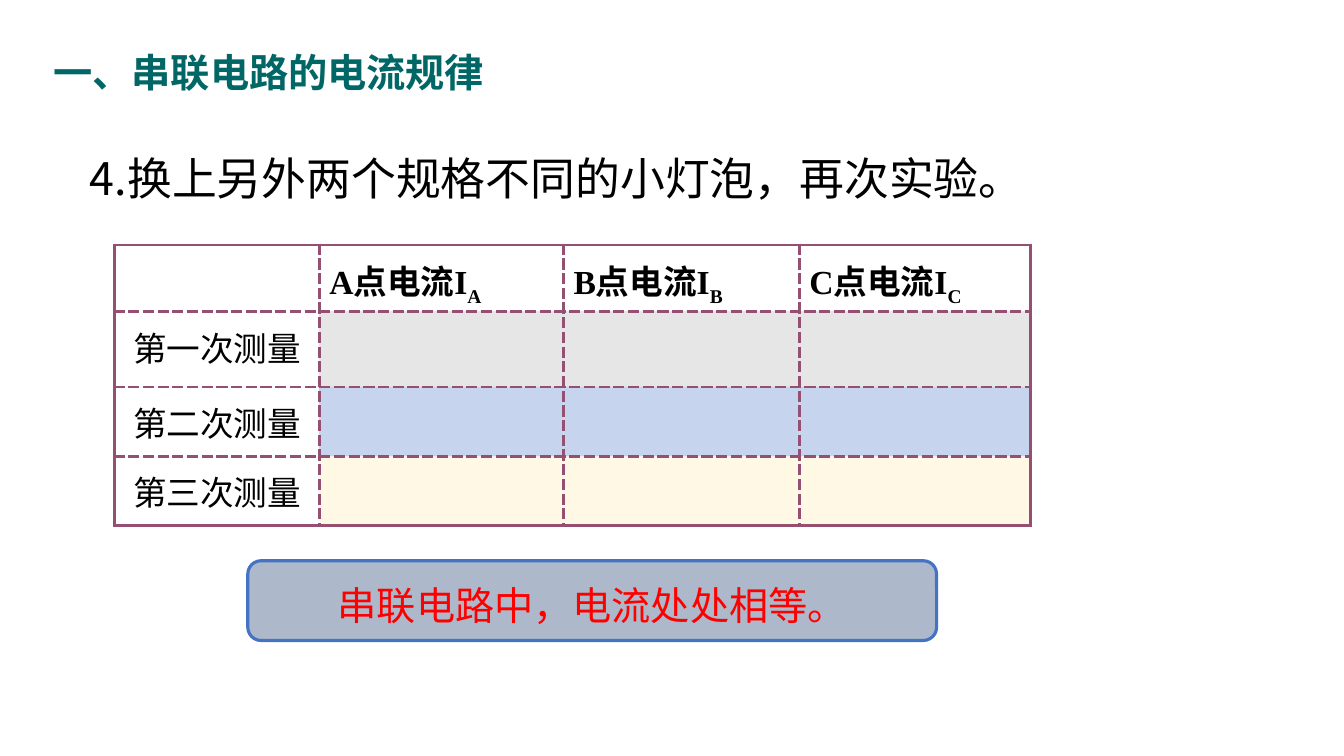
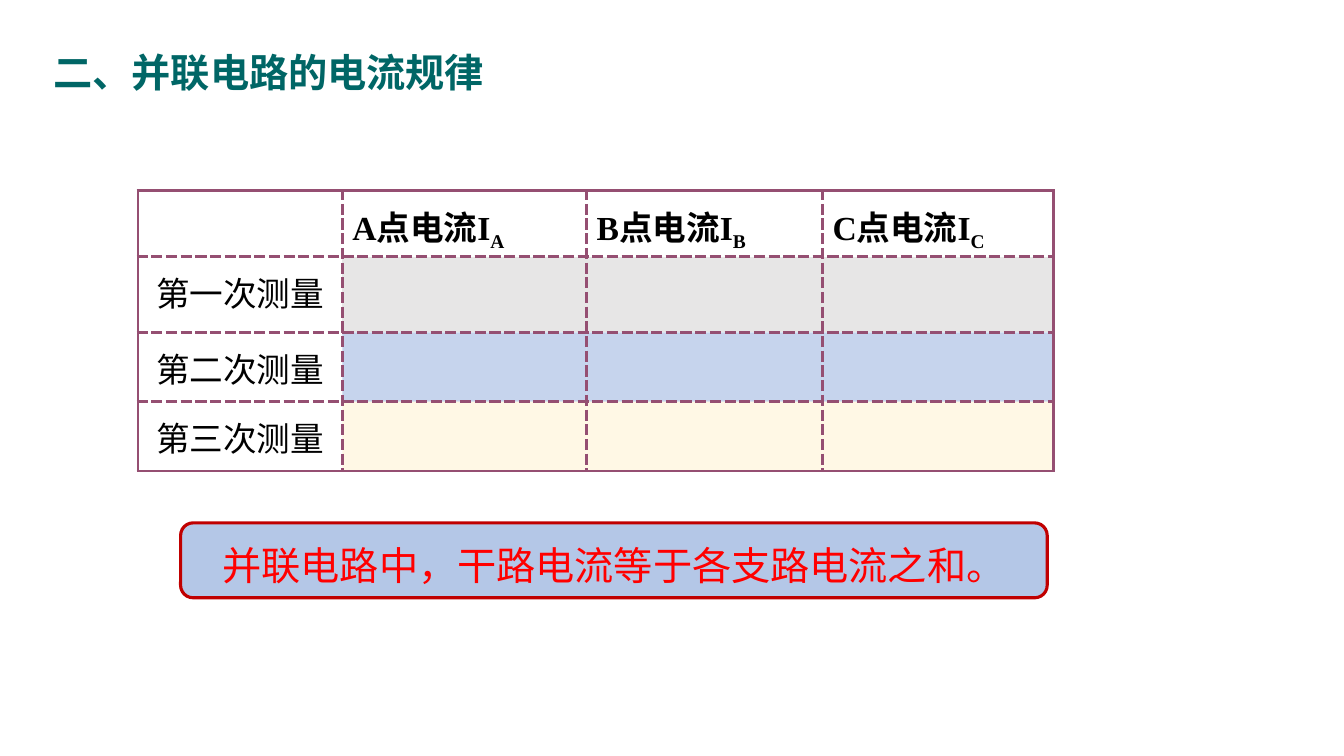
from lxml import etree
from pptx import Presentation
from pptx.dml.color import RGBColor
from pptx.enum.shapes import MSO_SHAPE
from pptx.enum.text import MSO_ANCHOR, MSO_AUTO_SIZE, PP_ALIGN
from pptx.oxml.ns import qn
from pptx.util import Pt

ROUNDED = MSO_SHAPE.ROUNDED_RECTANGLE
TOP, MIDDLE = MSO_ANCHOR.TOP, MSO_ANCHOR.MIDDLE
NO_FIT = MSO_AUTO_SIZE.NONE
LEFT, CENTER = PP_ALIGN.LEFT, PP_ALIGN.CENTER

# Colours
TEAL = RGBColor(0x00, 0x66, 0x66)
BLACK = RGBColor(0x00, 0x00, 0x00)
RED = RGBColor(0xFF, 0x00, 0x00)
DARK_RED = RGBColor(0xC0, 0x00, 0x00)
PLUM = RGBColor(0x95, 0x4F, 0x72)
GREY = RGBColor(0xE7, 0xE6, 0xE6)
BLUE = RGBColor(0x8F, 0xAA, 0xDC)
CREAM = RGBColor(0xFF, 0xF2, 0xCC)
SLATE = RGBColor(0xAD, 0xB9, 0xCA)
STRONG_BLUE = RGBColor(0x44, 0x72, 0xC4)
PALE_BLUE = RGBColor(0xB4, 0xC7, 0xE7)

# Text formats
SANS = "Noto Sans CJK SC"
SERIF = "Times New Roman"
TITLE = {"name": SANS, "size": Pt(28), "bold": True}
STEP = {"name": SANS, "size": Pt(32), "bold": False}
HEADER = {"name": SERIF, "size": Pt(24), "bold": True}
ROW_LABEL = {"name": SANS, "size": Pt(24), "bold": False}
RULE = {"name": SANS, "size": Pt(28), "bold": False}

# Table measures, in points, and content
COLUMN_WIDTHS = (146, 174.5, 168.5, 165)
ROW_HEIGHTS = (36.5, 54, 49.5, 49.5)
POINTS = "ABC"
MEASUREMENTS = (("第一次测量", GREY, 100), ("第二次测量", BLUE, 50), ("第三次测量", CREAM, 50))


def add_span(para, text, style, color, baseline=None):
    """Add a run, with the same face for Chinese text."""
    span = para.add_run()
    span.text = text
    for name, value in style.items():
        setattr(span.font, name, value)
    span.font.color.rgb = color
    properties = span._r.get_or_add_rPr()
    etree.SubElement(properties, qn("a:ea"), typeface=SANS)
    if baseline:
        properties.set("baseline", str(baseline * 1000))


def place(shape, left, top, width, height):
    shape.left, shape.top = Pt(left), Pt(top)
    shape.width, shape.height = Pt(width), Pt(height)


def write_line(shape, text, style, color, align, anchor, spacing=1.0):
    """Fill a box with one line of text."""
    frame = shape.text_frame
    frame.word_wrap = True
    frame.auto_size = NO_FIT
    frame.vertical_anchor = anchor
    para = frame.paragraphs[0]
    para.alignment = align
    para.line_spacing = spacing
    para.space_before = Pt(0)
    add_span(para, text, style, color)
    return para


def add_page(deck, layout, title):
    page = deck.slides.add_slide(deck.slide_layouts[layout])
    place(page.shapes.title, 31, 31, 480, 41)
    write_line(page.shapes.title, title, TITLE, TEAL, LEFT, TOP)
    return page


def fill_step(page, text):
    """Put the experiment step in the body placeholder."""
    body = page.placeholders[1]
    place(body, 57, 85, 724, 55)
    para = write_line(body, text, STEP, BLACK, LEFT, TOP, 1.5)
    properties = para._p.get_or_add_pPr()
    properties.set("marL", "0")
    properties.set("indent", "0")
    etree.SubElement(properties, qn("a:buNone"))


def set_borders(cell, solid_sides):
    """Draw four borders: solid on the named sides, dashed elsewhere."""
    properties = cell._tc.get_or_add_tcPr()
    for side in "LRTB":
        line = etree.SubElement(properties, qn("a:ln" + side), w=str(Pt(2.25)))
        fill = etree.SubElement(line, qn("a:solidFill"))
        etree.SubElement(fill, qn("a:srgbClr"), val=str(PLUM))
        dash = "solid" if side in solid_sides else "sysDash"
        etree.SubElement(line, qn("a:prstDash"), val=dash)


def fill_cell(cell, color, opacity):
    cell.fill.solid()
    cell.fill.fore_color.rgb = color
    if opacity < 100:
        tone = cell._tc.tcPr.find(qn("a:solidFill")).find(qn("a:srgbClr"))
        etree.SubElement(tone, qn("a:alpha"), val=str(opacity * 1000))


def add_current_table(page, left, top):
    row_count, column_count = len(ROW_HEIGHTS), len(COLUMN_WIDTHS)
    table = page.shapes.add_table(
        row_count, column_count, Pt(left), Pt(top),
        Pt(sum(COLUMN_WIDTHS)), Pt(sum(ROW_HEIGHTS))).table
    table.first_row = table.horz_banding = False
    for column, width in zip(table.columns, COLUMN_WIDTHS):
        column.width = Pt(width)
    for row, height in zip(table.rows, ROW_HEIGHTS):
        row.height = Pt(height)

    # Solid outer frame, dashed inner grid
    for r in range(row_count):
        for c in range(column_count):
            cell = table.cell(r, c)
            cell.margin_top, cell.margin_bottom = Pt(7.7), Pt(2.9)
            outer = {"L": c == 0, "R": c == column_count - 1,
                     "T": r == 0, "B": r == row_count - 1}
            set_borders(cell, [side for side, solid in outer.items() if solid])
            cell.fill.background()

    # Header row
    for c, point in enumerate(POINTS, 1):
        para = table.cell(0, c).text_frame.paragraphs[0]
        add_span(para, point + "点电流I", HEADER, BLACK)
        add_span(para, point, HEADER, BLACK, baseline=-25)

    # Measurement rows
    for r, (label, color, opacity) in enumerate(MEASUREMENTS, 1):
        para = table.cell(r, 0).text_frame.paragraphs[0]
        para.alignment = CENTER
        add_span(para, label, ROW_LABEL, BLACK)
        for c in range(1, column_count):
            fill_cell(table.cell(r, c), color, opacity)


def add_rule_box(page, text, bounds, fill, line):
    box = page.shapes.add_shape(ROUNDED, *map(Pt, bounds))
    box.shadow.inherit = False
    box.fill.solid()
    box.fill.fore_color.rgb = fill
    box.line.color.rgb = line
    box.line.width = Pt(2.25)
    write_line(box, text, RULE, RED, CENTER, MIDDLE, 1.2)


def main():
    deck = Presentation()
    deck.slide_width, deck.slide_height = Pt(960), Pt(540)

    # Series circuit
    page = add_page(deck, 1, "一、串联电路的电流规律")
    fill_step(page, "4.换上另外两个规格不同的小灯泡，再次实验。")
    add_current_table(page, 82, 175)
    add_rule_box(page, "串联电路中，电流处处相等。",
                 (177, 400.5, 492, 57), SLATE, STRONG_BLUE)

    # Parallel circuit
    page = add_page(deck, 5, "二、并联电路的电流规律")
    add_current_table(page, 98.5, 136)
    add_rule_box(page, "并联电路中，干路电流等于各支路电流之和。",
                 (129, 373.5, 619, 53.5), PALE_BLUE, DARK_RED)

    deck.save("out.pptx")


if __name__ == "__main__":
    main()
